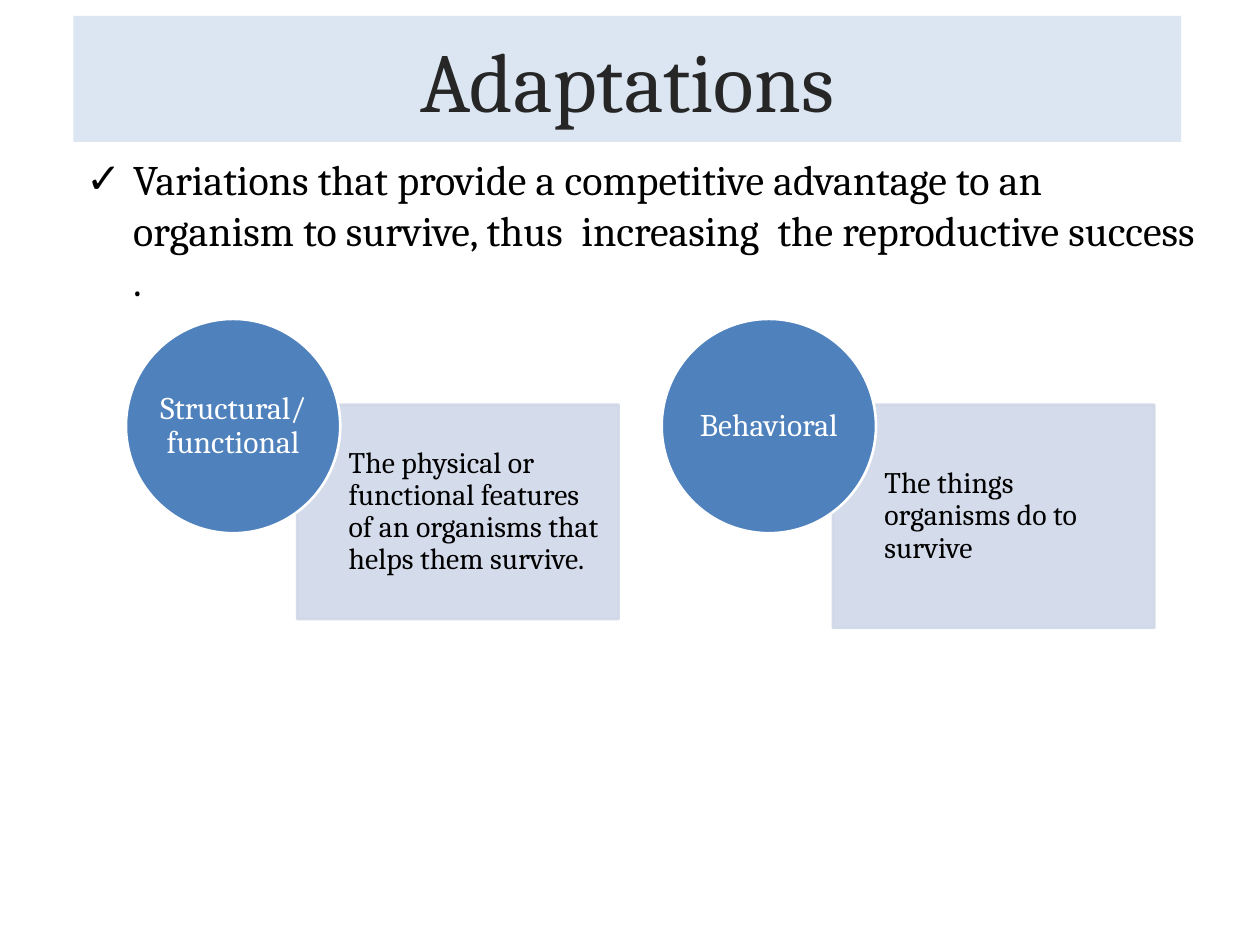
from lxml import etree
from pptx import Presentation
from pptx.dml.color import RGBColor
from pptx.enum.shapes import MSO_SHAPE
from pptx.enum.text import MSO_ANCHOR, MSO_AUTO_SIZE, PP_ALIGN
from pptx.oxml.ns import qn
from pptx.util import Cm, Pt

FONT = "Cambria"
BLACK = RGBColor(0x00, 0x00, 0x00)
WHITE = RGBColor(0xFF, 0xFF, 0xFF)
CHARCOAL = RGBColor(0x26, 0x26, 0x26)
PALE_BLUE = RGBColor(0xDC, 0xE6, 0xF2)
CARD_BLUE = RGBColor(0xD0, 0xD8, 0xE8)
CIRCLE_BLUE = RGBColor(0x4F, 0x81, 0xBD)

KINDS = [
    ("Structural/ functional", 4.32,
     "The physical or functional features of an organisms that helps them survive."),
    ("Behavioral", 4.5, "The things organisms do to survive"),
]


def place(sp, left, top, width, height):
    sp.left, sp.top, sp.width, sp.height = Cm(left), Cm(top), Cm(width), Cm(height)


def add_text(p, text, size, color):
    r = p.add_run()
    r.text = text
    r.font.name = FONT
    r.font.size = Pt(size)
    r.font.color.rgb = color


def paint(sp, color):
    sp.fill.solid()
    sp.fill.fore_color.rgb = color


def set_opacity(fill_parent, percent):
    color = fill_parent.find(qn("a:solidFill"))[0]
    etree.SubElement(color, qn("a:alpha"), val=str(percent * 1000))


def add_title(s, left, top, width, height):
    sp = s.shapes.title
    place(sp, left, top, width, height)
    paint(sp, PALE_BLUE)
    tf = sp.text_frame
    tf.vertical_anchor = MSO_ANCHOR.MIDDLE
    p = tf.paragraphs[0]
    p.alignment = PP_ALIGN.CENTER
    add_text(p, "Adaptations", 48, CHARCOAL)


def add_definition(s, left, top, width, height):
    sp = s.placeholders[1]
    place(sp, left, top, width, height)
    paint(sp, WHITE)
    tf = sp.text_frame
    tf.auto_size = MSO_AUTO_SIZE.NONE
    p = tf.paragraphs[0]
    # Check mark bullet with a hanging indent
    pPr = p._p.get_or_add_pPr()
    pPr.set("marL", str(Cm(0.95)))
    pPr.set("indent", str(-Cm(0.95)))
    etree.SubElement(pPr, qn("a:buFont"), typeface="Arial")
    etree.SubElement(pPr, qn("a:buChar"), char="✓")
    p.space_before = Pt(0)
    add_text(p, "Variations that provide a competitive advantage to an organism "
                "to survive, thus  increasing  the reproductive success .", 24, BLACK)


def add_shape(grp, kind, box, color, line_color):
    sp = grp.shapes.add_shape(kind, *map(Cm, box))
    sp.shadow.inherit = False
    paint(sp, color)
    sp.line.color.rgb = line_color
    sp.line.width = Pt(1.5)
    return sp


def add_label(grp, box, text, size, color, align, inset):
    tf = grp.shapes.add_textbox(*map(Cm, box)).text_frame
    tf.word_wrap = True
    tf.vertical_anchor = MSO_ANCHOR.MIDDLE
    tf.margin_left = 0
    tf.margin_top = tf.margin_right = tf.margin_bottom = Cm(inset)
    p = tf.paragraphs[0]
    p.alignment = align
    p.line_spacing = 0.9
    add_text(p, text, size, color)


def add_kind(grp, left, top, name, card_height, description):
    # Card with its description, clear of the circle
    x, y, width, indent = left + 3.45, top + 1.73, 6.48, 1.04
    card = add_shape(grp, MSO_SHAPE.RECTANGLE, (x, y, width, card_height),
                     CARD_BLUE, CARD_BLUE)
    spPr = card._element.spPr
    set_opacity(spPr, 90)
    set_opacity(spPr.find(qn("a:ln")), 90)
    add_label(grp, (x + indent, y, width - indent, card_height),
              description, 17, BLACK, PP_ALIGN.LEFT, 0.33)
    # Circle with its name
    size, pad = 4.32, 0.63
    add_shape(grp, MSO_SHAPE.OVAL, (left, top, size, size), CIRCLE_BLUE, WHITE)
    add_label(grp, (left + pad, top + pad, size - 2 * pad, size - 2 * pad),
              name, 18, WHITE, PP_ALIGN.CENTER, 0)


def add_diagram(s, left, top, pitch):
    grp = s.shapes.add_group_shape()
    for i, kind in enumerate(KINDS):
        add_kind(grp, left + i * pitch, top, *kind)


def main():
    prs = Presentation()
    prs.slide_width, prs.slide_height = Cm(25.4), Cm(19.05)
    s = prs.slides.add_slide(prs.slide_layouts[1])
    add_title(s, 1.48, 0.32, 22.33, 2.54)
    add_definition(s, 1.48, 2.97, 22.86, 3.33)
    add_diagram(s, 2.54, 6.43, 10.8)
    prs.save("out.pptx")


if __name__ == "__main__":
    main()
